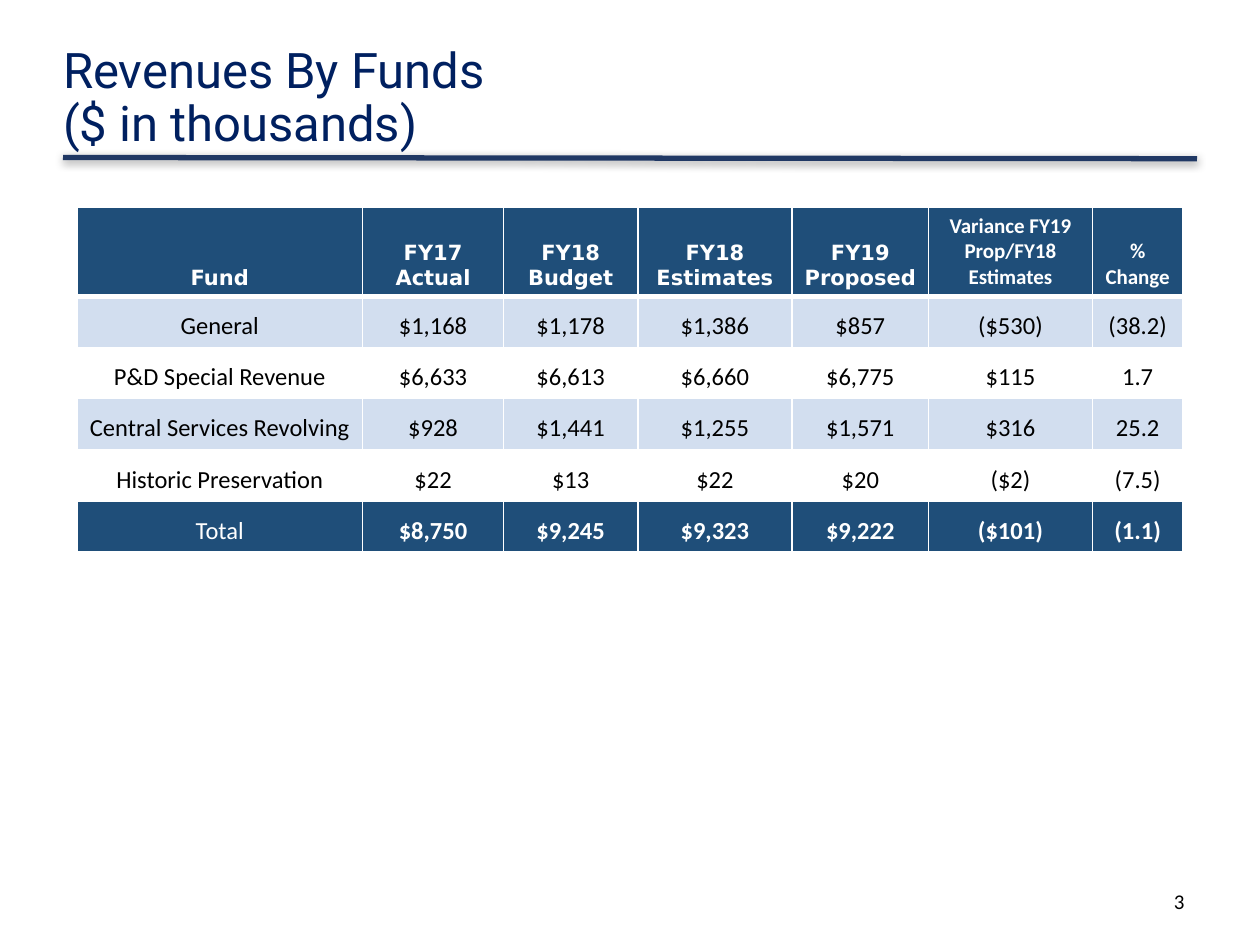
from lxml import etree
from pptx import Presentation
from pptx.dml.color import RGBColor
from pptx.enum.shapes import MSO_CONNECTOR
from pptx.enum.text import MSO_ANCHOR, PP_ALIGN
from pptx.oxml import parse_xml
from pptx.oxml.ns import nsdecls, qn
from pptx.util import Pt

STRAIGHT = MSO_CONNECTOR.STRAIGHT
MIDDLE, BOTTOM = MSO_ANCHOR.MIDDLE, MSO_ANCHOR.BOTTOM
LEFT, CENTER, RIGHT = PP_ALIGN.LEFT, PP_ALIGN.CENTER, PP_ALIGN.RIGHT

TITLE_BLUE = RGBColor(0x00, 0x20, 0x60)
RULE_BLUE = RGBColor(0x20, 0x38, 0x64)
DARK_BLUE = RGBColor(0x1F, 0x4E, 0x79)
PALE_BLUE = RGBColor(0xD2, 0xDE, 0xEF)
WHITE = RGBColor(0xFF, 0xFF, 0xFF)
BLACK = RGBColor(0x00, 0x00, 0x00)

TITLE = "Revenues By Funds\v($ in thousands)"
PAGE_NUMBER = "3"
ROWS = [
    ["Fund", "FY17\nActual", "FY18\nBudget", "FY18\nEstimates", "FY19\nProposed",
     "Variance FY19 Prop/FY18 Estimates", "%\nChange"],
    ["General", "$1,168", "$1,178", "$1,386", "$857", "($530)", "(38.2)"],
    ["P&D Special Revenue", "$6,633", "$6,613", "$6,660", "$6,775", "$115", "1.7"],
    ["Central Services Revolving", "$928", "$1,441", "$1,255", "$1,571", "$316", "25.2"],
    ["Historic Preservation", "$22", "$13", "$22", "$20", "($2)", "(7.5)"],
    ["Total", "$8,750", "$9,245", "$9,323", "$9,222", "($101)", "(1.1)"],
]
COLUMN_WIDTHS = [163.2, 80.6, 76.7, 88.2, 78, 93.6, 51.8]
HEADER_HEIGHT, ROW_HEIGHT = 51, 29.2
TABLE_LEFT, TABLE_TOP = 44, 118.4
FIRST_CALIBRI_HEADER = 5


def format_text(text_frame, font_name, size, color, alignment, bold=False):
    for paragraph in text_frame.paragraphs:
        paragraph.alignment = alignment
        for run in paragraph.runs:
            run.font.name = font_name
            run.font.size = Pt(size)
            run.font.bold = bold
            run.font.color.rgb = color


def set_borders(cell, bottom_width):
    properties = cell._tc.get_or_add_tcPr()
    widths = {"lnL": 1, "lnR": 1, "lnT": 1, "lnB": bottom_width}
    for position, (tag, width) in enumerate(widths.items()):
        properties.insert(position, parse_xml(
            f'<a:{tag} {nsdecls("a")} w="{Pt(width)}"><a:solidFill>'
            f'<a:srgbClr val="{WHITE}"/></a:solidFill></a:{tag}>'))


def add_rule(slide):
    rule = slide.shapes.add_connector(STRAIGHT, Pt(36), Pt(90), Pt(684), Pt(90.7))
    rule.line.color.rgb = RULE_BLUE
    rule.line.width = Pt(3)
    effects = etree.SubElement(rule._element.spPr, qn("a:effectLst"))
    shadow = etree.SubElement(effects, qn("a:outerShdw"), blurRad=str(Pt(5)),
                              dist=str(Pt(1.6)), dir="5400000", rotWithShape="0")
    color = etree.SubElement(shadow, qn("a:srgbClr"), val=str(BLACK))
    etree.SubElement(color, qn("a:alpha"), val="38000")


def add_title(slide):
    title = slide.shapes.title
    title.left, title.top, title.width, title.height = Pt(36), Pt(23.8), Pt(494), Pt(66.2)
    frame = title.text_frame
    frame.text = TITLE
    frame.word_wrap = True
    frame.vertical_anchor = MIDDLE
    frame.margin_left = frame.margin_right = frame.margin_top = frame.margin_bottom = 0
    frame.paragraphs[0].line_spacing = 0.9
    format_text(frame, "Roboto", 28, TITLE_BLUE, LEFT)


def add_page_number(slide):
    box = slide.shapes.add_textbox(Pt(516), Pt(500.4), Pt(168), Pt(28.8))
    frame = box.text_frame
    frame.word_wrap = True
    frame.vertical_anchor = MIDDLE
    frame.text = PAGE_NUMBER
    format_text(frame, "Calibri", 12, BLACK, RIGHT)


def add_revenue_table(slide):
    last = len(ROWS) - 1
    table = slide.shapes.add_table(
        len(ROWS), len(COLUMN_WIDTHS), Pt(TABLE_LEFT), Pt(TABLE_TOP),
        Pt(sum(COLUMN_WIDTHS)), Pt(HEADER_HEIGHT + last * ROW_HEIGHT)).table
    for column, width in zip(table.columns, COLUMN_WIDTHS):
        column.width = Pt(width)
    for row_index, values in enumerate(ROWS):
        is_header, is_total = row_index == 0, row_index == last
        table.rows[row_index].height = Pt(HEADER_HEIGHT if is_header else ROW_HEIGHT)
        if is_header or is_total:
            fill, color = DARK_BLUE, WHITE
        else:
            fill, color = (PALE_BLUE if row_index % 2 else WHITE), BLACK
        for column_index, value in enumerate(values):
            cell = table.cell(row_index, column_index)
            cell.text = value
            cell.vertical_anchor = BOTTOM
            cell.margin_left = cell.margin_right = Pt(5)
            cell.fill.solid()
            cell.fill.fore_color.rgb = fill
            set_borders(cell, 3 if is_header else 1)
            wide_font = is_header and column_index < FIRST_CALIBRI_HEADER
            format_text(cell.text_frame, "DejaVu Sans" if wide_font else "Calibri",
                        12 if is_header else 14, color, CENTER,
                        is_header or (is_total and column_index > 0))


def main():
    presentation = Presentation()
    presentation.slide_width, presentation.slide_height = Pt(720), Pt(540)
    slide = presentation.slides.add_slide(presentation.slide_layouts[5])
    add_rule(slide)
    add_title(slide)
    add_page_number(slide)
    add_revenue_table(slide)
    presentation.save("out.pptx")


if __name__ == "__main__":
    main()
